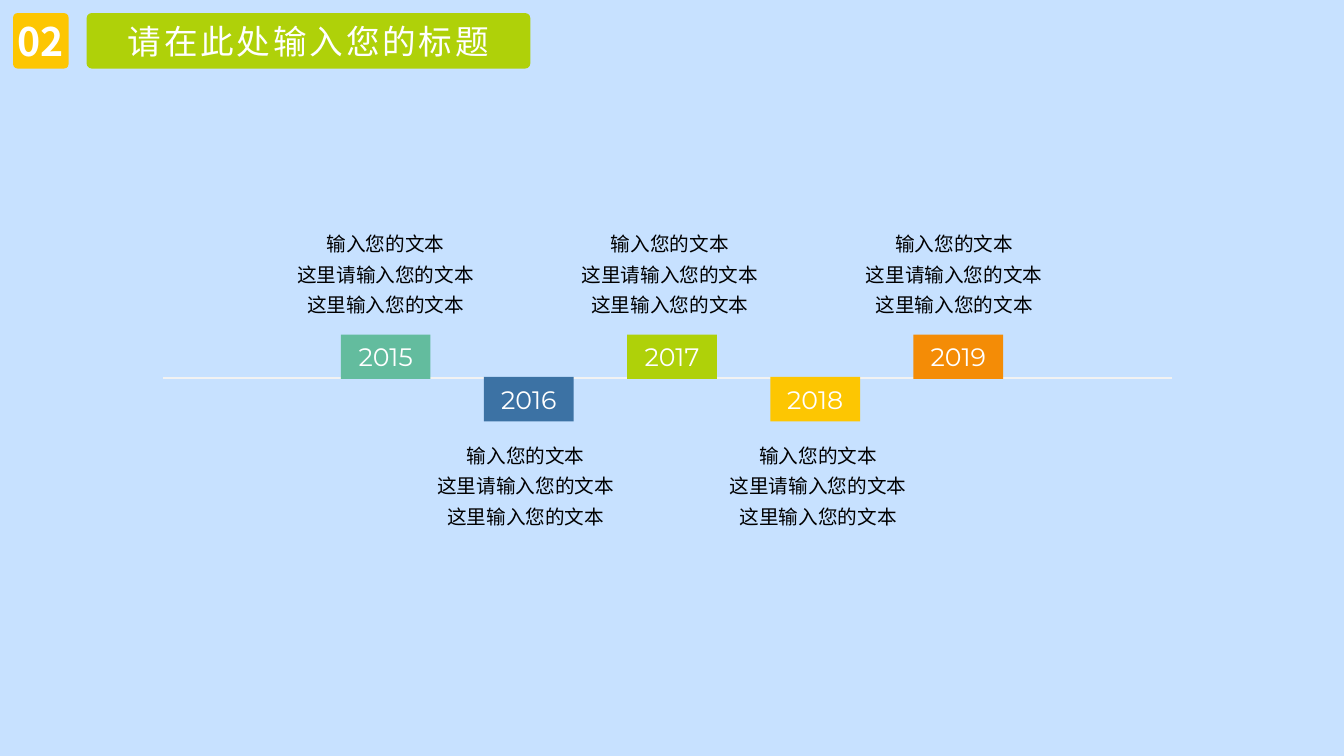
from lxml import etree
from pptx import Presentation
from pptx.dml.color import RGBColor
from pptx.enum.shapes import MSO_CONNECTOR, MSO_SHAPE
from pptx.enum.text import MSO_ANCHOR, PP_ALIGN
from pptx.oxml.ns import qn
from pptx.util import Pt

RECT = MSO_SHAPE.RECTANGLE
ROUND = MSO_SHAPE.ROUNDED_RECTANGLE
STRAIGHT = MSO_CONNECTOR.STRAIGHT
TOP, MIDDLE, BOTTOM = MSO_ANCHOR.TOP, MSO_ANCHOR.MIDDLE, MSO_ANCHOR.BOTTOM
CENTER = PP_ALIGN.CENTER

PX = 9144
WIDTH, HEIGHT = 1333, 750
COLORS = {
    "sky": "C7E1FF",
    "mint": "63BC9E",
    "blue": "3C72A4",
    "lime": "AFD109",
    "gold": "FDC602",
    "orange": "F48C06",
    "pale": "F2F2F2",
    "white": "FFFFFF",
    "black": "000000",
}
FORMATS = {
    "year": {"size": Pt(18), "name": "Montserrat"},
    "note": {"size": Pt(14), "name": "Arial"},
    "number": {"size": Pt(28), "name": "Noto Sans CJK SC", "bold": True},
    "title": {"size": Pt(24), "name": "Noto Sans CJK SC"},
}
NOTE = ["输入您的文本", "这里请输入您的文本", "这里输入您的文本"]
STEPS = [
    ("2015", "mint", 289),
    ("2016", "blue", 428),
    ("2017", "lime", 571),
    ("2018", "gold", 718),
    ("2019", "orange", 853),
]


def color(name):
    return RGBColor.from_string(COLORS[name])


class Painter:
    def __init__(self, deck):
        self.slide = deck.slides.add_slide(deck.slide_layouts[6])
        self.shapes = self.slide.shapes

    def backdrop(self, tint):
        fill = self.slide.background.fill
        fill.solid()
        fill.fore_color.rgb = color(tint)

    def label(self, shape, lines, style, ink, anchor=MIDDLE, inset=None,
              leading=None, tracking=0):
        frame = shape.text_frame
        frame.word_wrap = True
        frame.vertical_anchor = anchor
        if inset is not None:
            for side in ("left", "top", "right", "bottom"):
                setattr(frame, f"margin_{side}", inset * PX)
        for index, line in enumerate(lines):
            para = frame.add_paragraph() if index else frame.paragraphs[0]
            para.alignment = CENTER
            para.line_spacing = leading
            run = para.add_run()
            run.text = line
            for key, value in FORMATS[style].items():
                setattr(run.font, key, value)
            run.font.color.rgb = color(ink)
            props = run._r.get_or_add_rPr()
            asian = etree.SubElement(props, qn("a:ea"))
            asian.set("typeface", FORMATS[style]["name"])
            if tracking:
                props.set("spc", str(tracking * 100))

    def block(self, box, tint, text, style, kind=RECT, corner=None, **layout):
        shape = self.shapes.add_shape(kind, *(n * PX for n in box))
        shape.shadow.inherit = False
        shape.fill.solid()
        shape.fill.fore_color.rgb = color(tint)
        shape.line.fill.background()
        if corner is not None:
            shape.adjustments[0] = corner
        self.label(shape, [text], style, "white", **layout)

    def note(self, box, lines, anchor):
        shape = self.shapes.add_textbox(*(n * PX for n in box))
        self.label(shape, lines, "note", "black", anchor, inset=0, leading=1.3)

    def line(self, ends, tint, weight):
        rule = self.shapes.add_connector(STRAIGHT, *(n * PX for n in ends))
        rule.line.color.rgb = color(tint)
        rule.line.width = Pt(weight)
        etree.SubElement(rule._element.spPr, qn("a:effectLst"))


def main():
    deck = Presentation()
    deck.slide_width, deck.slide_height = WIDTH * PX, HEIGHT * PX
    page = Painter(deck)
    page.backdrop("sky")
    page.line((162, 375, 1162, 375), "pale", 1.75)
    for index, (year, tint, left) in enumerate(STEPS):
        below = index % 2
        page.block((338 + 142 * index, 374 if below else 332, 89, 44),
                   tint, year, "year")
        page.note((left, 433 if below else 223, 187, 91), NOTE,
                  TOP if below else BOTTOM)
    page.block((13, 13, 55, 55), "gold", "02", "number", ROUND, 0.08, inset=0)
    page.block((86, 13, 440, 55), "lime", "请在此处输入您的标题", "title",
               ROUND, 0.09, tracking=2)
    deck.save("out.pptx")


if __name__ == "__main__":
    main()
